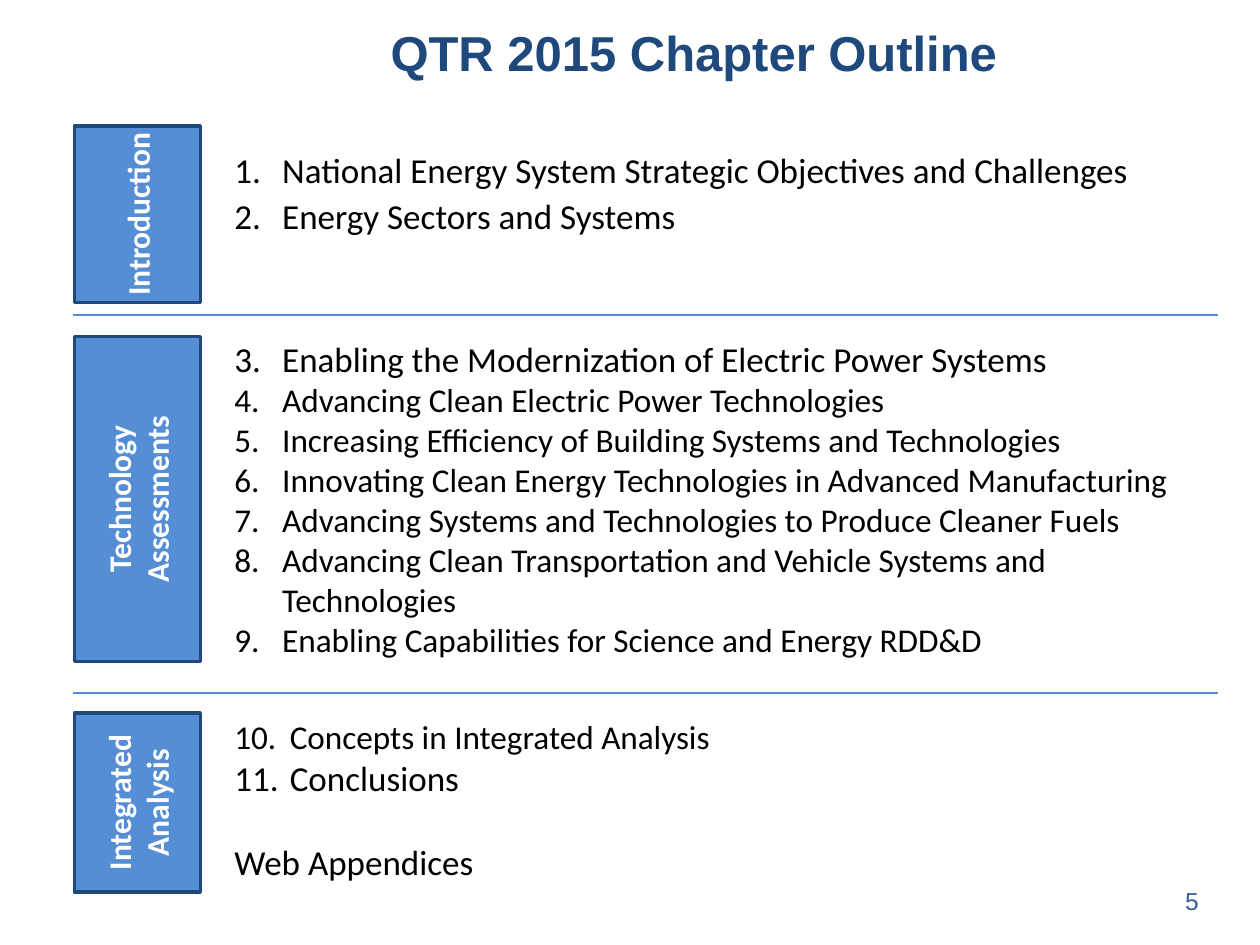
from lxml.etree import SubElement
from pptx import Presentation
from pptx.dml.color import RGBColor
from pptx.enum.shapes import MSO_CONNECTOR, MSO_SHAPE
from pptx.enum.text import MSO_ANCHOR, MSO_AUTO_SIZE, PP_ALIGN
from pptx.oxml.ns import qn
from pptx.util import Inches, Pt

COLORS = {"navy": "1F497D", "blue": "558ED5", "number": "376092",
          "black": "000000", "white": "FFFFFF"}

TITLE = "QTR 2015 Chapter Outline"
PAGE_NUMBER = "5"
CLOSING = "Web Appendices"
SECTIONS = [
    {"label": "Introduction", "middle": 1.7, "length": 1.4, "gap": 0, "indent": 0.38,
     "chapters": [("National Energy System Strategic Objectives and Challenges", 20),
                  ("Energy Sectors and Systems", 20)]},
    {"label": "Technology Assessments", "middle": 3.96, "length": 2.58, "gap": 58, "indent": 0.38,
     "chapters": [("Enabling the Modernization of Electric Power Systems", 20),
                  ("Advancing Clean Electric Power Technologies", 19),
                  ("Increasing Efficiency of Building Systems and Technologies", 19),
                  ("Innovating Clean Energy Technologies in Advanced Manufacturing", 19),
                  ("Advancing Systems and Technologies to Produce Cleaner Fuels", 19),
                  ("Advancing Clean Transportation and Vehicle Systems and Technologies", 19),
                  ("Enabling Capabilities for Science and Energy RDD&D", 19)]},
    {"label": "Integrated Analysis", "middle": 6.37, "length": 1.42, "gap": 33, "indent": 0.44,
     "chapters": [("Concepts in Integrated Analysis", 19),
                  ("Conclusions", 20)]},
]
DIVIDERS = [2.5, 5.5]
DIVIDER_LEFT, DIVIDER_RIGHT = 0.58, 9.67
BOX_CENTER, BOX_THICKNESS = 1.09, 1.0


def color(name):
    return RGBColor.from_string(COLORS[name])


def place(shape, left, top, width, height):
    shape.left, shape.top = Inches(left), Inches(top)
    shape.width, shape.height = Inches(width), Inches(height)


def style(paragraph, size, name, color_name, bold=False):
    for run in paragraph.runs:
        run.font.size = Pt(size)
        run.font.name = name
        run.font.bold = bold
        run.font.color.rgb = color(color_name)


def set_bullet(paragraph, indent, start=None):
    properties = paragraph._p.get_or_add_pPr()
    properties.set("marL", str(Inches(indent)))
    properties.set("indent", str(-Inches(indent)))
    if start is None:
        SubElement(properties, qn("a:buNone"))
    else:
        SubElement(properties, qn("a:buFont"), typeface="+mj-lt")
        SubElement(properties, qn("a:buAutoNum"), type="arabicPeriod", startAt=str(start))


def add_entry(text_frame, text, size, gap, indent, start=None):
    first = not text_frame.text
    paragraph = text_frame.paragraphs[0] if first else text_frame.add_paragraph()
    paragraph.text = text
    paragraph.line_spacing = 1.0
    paragraph.space_before = Pt(gap)
    paragraph.space_after = Pt(0)
    set_bullet(paragraph, indent, start)
    style(paragraph, size, "Calibri", "black")


def add_section_box(slide, label, middle, length):
    box = slide.shapes.add_shape(
        MSO_SHAPE.RECTANGLE, Inches(BOX_CENTER - length / 2),
        Inches(middle - BOX_THICKNESS / 2), Inches(length), Inches(BOX_THICKNESS))
    box.rotation = 270
    box.shadow.inherit = False
    box.fill.solid()
    box.fill.fore_color.rgb = color("blue")
    box.line.color.rgb = color("navy")
    box.line.width = Pt(2)
    text_frame = box.text_frame
    text_frame.word_wrap = True
    text_frame.margin_left = text_frame.margin_right = Inches(0.04)
    text_frame.vertical_anchor = MSO_ANCHOR.MIDDLE
    text_frame.text = label
    text_frame.paragraphs[0].alignment = PP_ALIGN.CENTER
    style(text_frame.paragraphs[0], 18, "Calibri", "white", True)


def add_divider(slide, top):
    line = slide.shapes.add_connector(
        MSO_CONNECTOR.STRAIGHT, Inches(DIVIDER_LEFT), Inches(top),
        Inches(DIVIDER_RIGHT), Inches(top))
    line.line.color.rgb = color("blue")
    line.line.width = Pt(0.75)
    SubElement(line._element.spPr, qn("a:effectLst"))


def main():
    presentation = Presentation()
    presentation.slide_width, presentation.slide_height = Inches(10), Inches(7.5)
    slide = presentation.slides.add_slide(presentation.slide_layouts[1])

    title = slide.shapes.title
    place(title, 3, 0, 7, 0.83)
    title.text_frame.text = TITLE
    title.text_frame.vertical_anchor = MSO_ANCHOR.MIDDLE
    title.text_frame.paragraphs[0].alignment = PP_ALIGN.LEFT
    style(title.text_frame.paragraphs[0], 28, "Arial", "navy", True)

    body = slide.placeholders[1]
    place(body, 1.76, 1.13, 7.67, 6.04)
    body.text_frame.word_wrap = True
    body.text_frame.auto_size = MSO_AUTO_SIZE.NONE

    start = 1
    for section in SECTIONS:
        add_section_box(slide, section["label"], section["middle"], section["length"])
        for index, (chapter, size) in enumerate(section["chapters"]):
            gap = section["gap"] if index == 0 else 2 if start == 1 else 0
            add_entry(body.text_frame, chapter, size, gap, section["indent"], start)
        start += len(section["chapters"])
    add_entry(body.text_frame, CLOSING, 20, 24, 0)

    for top in DIVIDERS:
        add_divider(slide, top)

    number = slide.shapes.add_textbox(Inches(9.25), Inches(6.95), Inches(0.42), Inches(0.4))
    number.text_frame.word_wrap = True
    number.text_frame.vertical_anchor = MSO_ANCHOR.MIDDLE
    number.text_frame.text = PAGE_NUMBER
    number.text_frame.paragraphs[0].alignment = PP_ALIGN.CENTER
    style(number.text_frame.paragraphs[0], 14, "Arial", "number")

    presentation.save("out.pptx")


if __name__ == "__main__":
    main()
